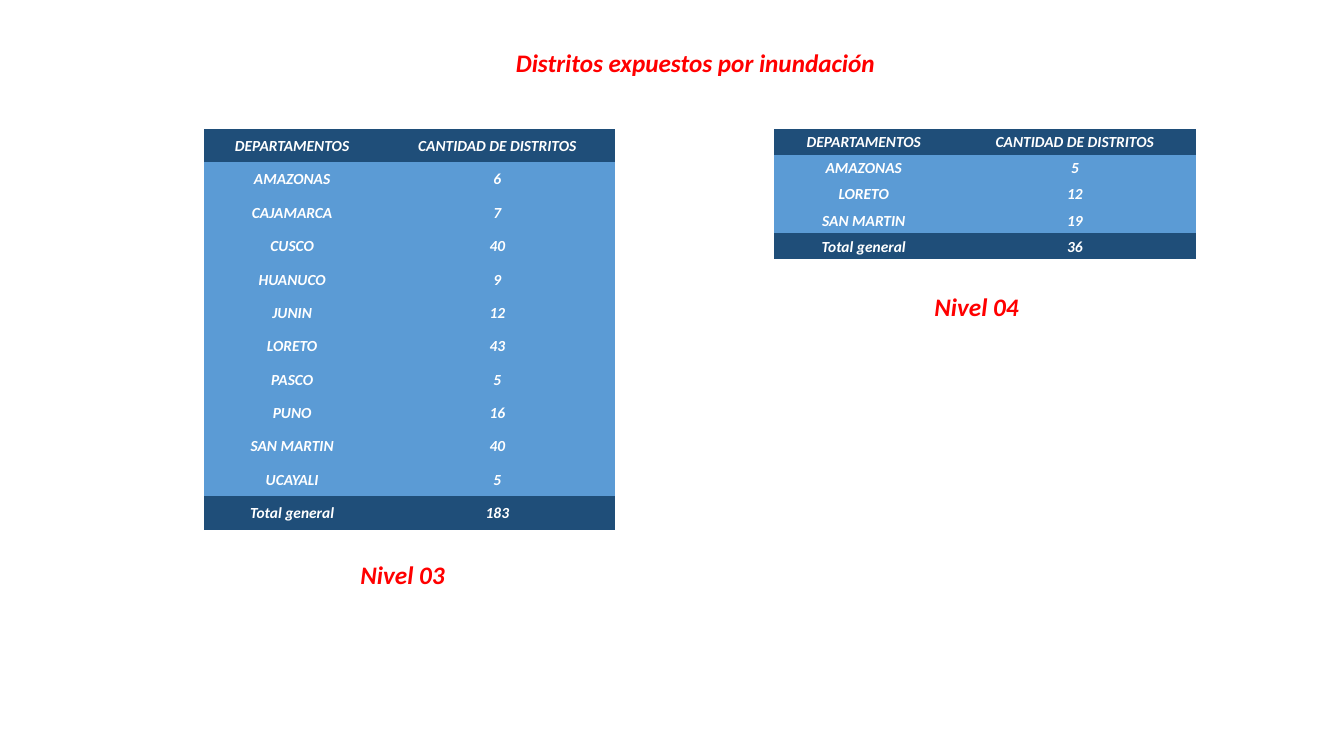
import dataclasses

import pptx
import pptx.dml.color
import pptx.enum.text
import pptx.util

Pt = pptx.util.Pt
RGB = pptx.dml.color.RGBColor
CENTER = pptx.enum.text.PP_ALIGN.CENTER
ANCHOR = pptx.enum.text.MSO_ANCHOR
AUTO_SIZE = pptx.enum.text.MSO_AUTO_SIZE


@dataclasses.dataclass(frozen=True)
class Theme:
    font: str = "Calibri"
    heading_color: RGB = RGB(0xFF, 0x00, 0x00)
    cell_color: RGB = RGB(0xFF, 0xFF, 0xFF)
    edge_fill: RGB = RGB(0x1F, 0x4E, 0x79)
    body_fill: RGB = RGB(0x5B, 0x9B, 0xD5)
    heading_size: int = 18
    cell_size: int = 11


THEME = Theme()
NO_GRID_STYLE = "{2D5ABB26-0587-4C30-8999-92F81FD0307C}"
HEADER = ("DEPARTAMENTOS", "CANTIDAD DE DISTRITOS")
TABLES_TOP = 92.2
LEVEL_03 = [
    ("AMAZONAS", 6), ("CAJAMARCA", 7), ("CUSCO", 40), ("HUANUCO", 9),
    ("JUNIN", 12), ("LORETO", 43), ("PASCO", 5), ("PUNO", 16),
    ("SAN MARTIN", 40), ("UCAYALI", 5),
]
LEVEL_04 = [("AMAZONAS", 5), ("LORETO", 12), ("SAN MARTIN", 19)]


def write(frame, text, size, color):
    """Fill a text frame with one centred, bold italic line."""
    frame.text = text
    line = frame.paragraphs[0]
    line.alignment = CENTER
    font = line.runs[0].font
    font.name, font.size, font.color.rgb = THEME.font, Pt(size), color
    font.bold = font.italic = True


def write_heading(heading, text, wrap):
    frame = heading.text_frame
    write(frame, text, THEME.heading_size, THEME.heading_color)
    frame.word_wrap = wrap
    frame.vertical_anchor = ANCHOR.TOP
    frame.auto_size = AUTO_SIZE.SHAPE_TO_FIT_TEXT


def add_title(slide, text, left, top, width, height):
    title = slide.shapes.title
    title.left, title.top = Pt(left), Pt(top)
    title.width, title.height = Pt(width), Pt(height)
    write_heading(title, text, wrap=False)


def add_level_label(slide, text, left, top):
    label = slide.shapes.add_textbox(Pt(left), Pt(top), Pt(86.4), Pt(28.8))
    write_heading(label, text, wrap=True)


def add_districts_table(slide, districts, left, column_widths, row_height):
    total = sum(count for _, count in districts)
    rows = [HEADER, *districts, ("Total general", total)]
    frame = slide.shapes.add_table(
        len(rows), len(HEADER), Pt(left), Pt(TABLES_TOP),
        Pt(sum(column_widths)), Pt(row_height * len(rows)))
    table = frame.table

    # Plain table style without grid lines or banding
    table.first_row = table.horz_banding = False
    table._tbl.tblPr.find(pptx.oxml.ns.qn("a:tableStyleId")).text = NO_GRID_STYLE

    for column, width in zip(table.columns, column_widths):
        column.width = Pt(width)
    for index, values in enumerate(rows):
        table.rows[index].height = Pt(row_height)
        is_edge = index in (0, len(rows) - 1)
        for cell, value in zip(table.rows[index].cells, values):
            cell.margin_left = cell.margin_right = cell.margin_top = Pt(0.7)
            cell.margin_bottom = Pt(0)
            cell.vertical_anchor = ANCHOR.MIDDLE
            cell.fill.solid()
            cell.fill.fore_color.rgb = THEME.edge_fill if is_edge else THEME.body_fill
            write(cell.text_frame, str(value), THEME.cell_size, THEME.cell_color)


def main():
    deck = pptx.Presentation()
    deck.slide_width, deck.slide_height = Pt(960), Pt(540)
    slide = deck.slides.add_slide(deck.slide_layouts.get_by_name("Title Only"))

    # Title
    add_title(slide, "Distritos expuestos por inundación", 360, 30.2, 273.6, 28.8)

    # Level 03, on the left
    add_districts_table(slide, LEVEL_03, 146, (125.4, 167.8), 23.85)
    add_level_label(slide, "Nivel 03", 244.4, 396)

    # Level 04, on the right
    add_districts_table(slide, LEVEL_04, 552.6, (128.8, 172.8), 18.6)
    add_level_label(slide, "Nivel 04", 654.4, 204.5)

    deck.save("out.pptx")


if __name__ == "__main__":
    main()
